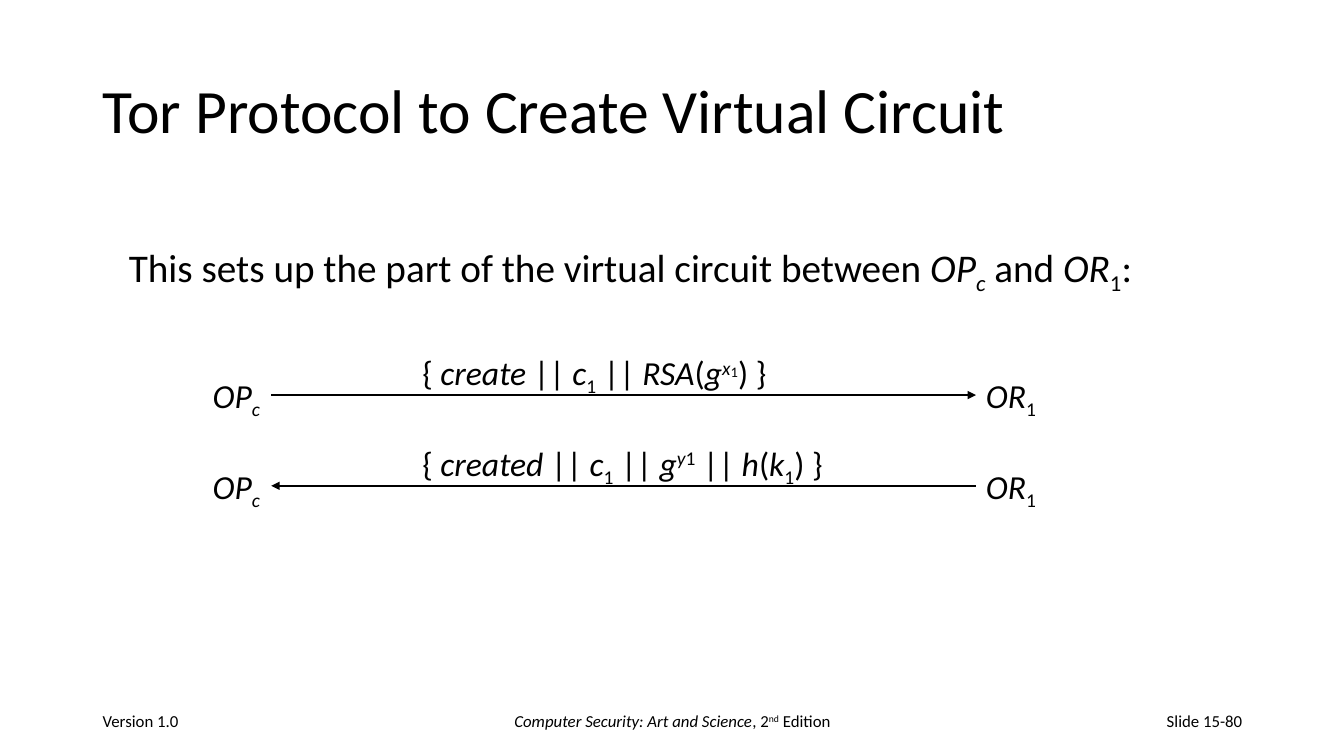
from lxml.etree import SubElement
from pptx import Presentation
from pptx.dml.color import RGBColor
from pptx.enum.shapes import MSO_CONNECTOR
from pptx.enum.text import MSO_ANCHOR, MSO_AUTO_SIZE, PP_ALIGN
from pptx.oxml.ns import qn
from pptx.util import Inches, Pt

BLACK = RGBColor(0, 0, 0)
FONT = "Calibri"
BASELINES = {"_": "-25000", "^": "30000"}

presentation = Presentation()
presentation.slide_width = Inches(13.33)
presentation.slide_height = Inches(7.5)
slide = presentation.slides.add_slide(presentation.slide_layouts[5])


def write(paragraph, runs, size, alignment=PP_ALIGN.LEFT):
    paragraph.alignment = alignment
    for text, style in runs:
        run = paragraph.add_run()
        run.text = text
        run.font.name = FONT
        run.font.size = Pt(18 if "s" in style else size)
        run.font.italic = "i" in style
        run.font.color.rgb = BLACK
        for mark, baseline in BASELINES.items():
            if mark in style:
                run.font._element.set("baseline", baseline)


def add_text(left, top, width, height, runs, size, alignment=PP_ALIGN.LEFT):
    box = slide.shapes.add_textbox(Inches(left), Inches(top), Inches(width), Inches(height))
    write(box.text_frame.paragraphs[0], runs, size, alignment)
    return box.text_frame


title = slide.shapes.title
title.left, title.top = Inches(0.92), Inches(0.4)
title.width, title.height = Inches(11.5), Inches(1.45)
title.text_frame.auto_size = MSO_AUTO_SIZE.NONE
title.text_frame.vertical_anchor = MSO_ANCHOR.MIDDLE
title_paragraph = title.text_frame.paragraphs[0]
title_paragraph.line_spacing = 0.9
write(title_paragraph, [("Tor Protocol to Create Virtual Circuit", "")], 44)

proxy = [("OP", "i"), ("c", "i_")]
router = [("OR", "i"), ("1", "_")]
circuit = [("c", "i"), ("1", "_")]

intro = [("This sets up the part of the virtual circuit between ", ""), *proxy,
         (" and ", ""), *router, (":", "")]
create = [("{", ""), (" create", "i"), (" || ", ""), *circuit, (" || ", ""),
          ("RSA", "i"), ("(", ""), ("g", "i"), ("x", "i^"), ("1", "^s"), (") }", "")]
created = [("{ ", ""), ("created", "i"), (" || ", ""), *circuit, (" || ", ""),
           ("g", "i"), ("y", "i^"), ("1", "^"), (" || ", ""),
           ("h", "i"), ("(", ""), ("k", "i"), ("1", "_"), (") }", "")]

labels = [(1.18, 2.36, 10.2, 0.57, intro, 28)]
messages = [(create, 3.68, "a:tailEnd"), (created, 4.26, "a:headEnd")]
for row, (message, message_width, arrow_end) in enumerate(messages):
    line_y = 3.92 + row * 0.9
    labels += [
        (2.01, line_y - 0.25, 0.68, 0.5, proxy, 24),
        (9.68, line_y - 0.25, 0.72, 0.5, router, 24),
        (4.09, line_y - 0.48, message_width, 0.5, message, 24),
    ]
    arrow = slide.shapes.add_connector(
        MSO_CONNECTOR.STRAIGHT, Inches(2.69), Inches(line_y), Inches(9.68), Inches(line_y))
    arrow.line.color.rgb = BLACK
    arrow.line.width = Pt(1.5)
    SubElement(arrow.line._get_or_add_ln(), qn(arrow_end), type="triangle")
    SubElement(arrow._element.spPr, qn("a:effectLst"))

for label in labels:
    frame = add_text(*label)
    frame.word_wrap = False
    frame.auto_size = MSO_AUTO_SIZE.SHAPE_TO_FIT_TEXT

book = [("Computer Security: Art and Science", "i"), (", 2", ""), ("nd", "^"), (" Edition", "")]
footers = [
    (0.92, 3, [("Version 1.0", "")], PP_ALIGN.LEFT),
    (4.42, 4.5, book, PP_ALIGN.CENTER),
    (9.42, 3, [("Slide 15-80", "")], PP_ALIGN.RIGHT),
]
for left, width, runs, alignment in footers:
    frame = add_text(left, 6.95, width, 0.4, runs, 12, alignment)
    frame.word_wrap = True
    frame.vertical_anchor = MSO_ANCHOR.MIDDLE

presentation.save("out.pptx")
